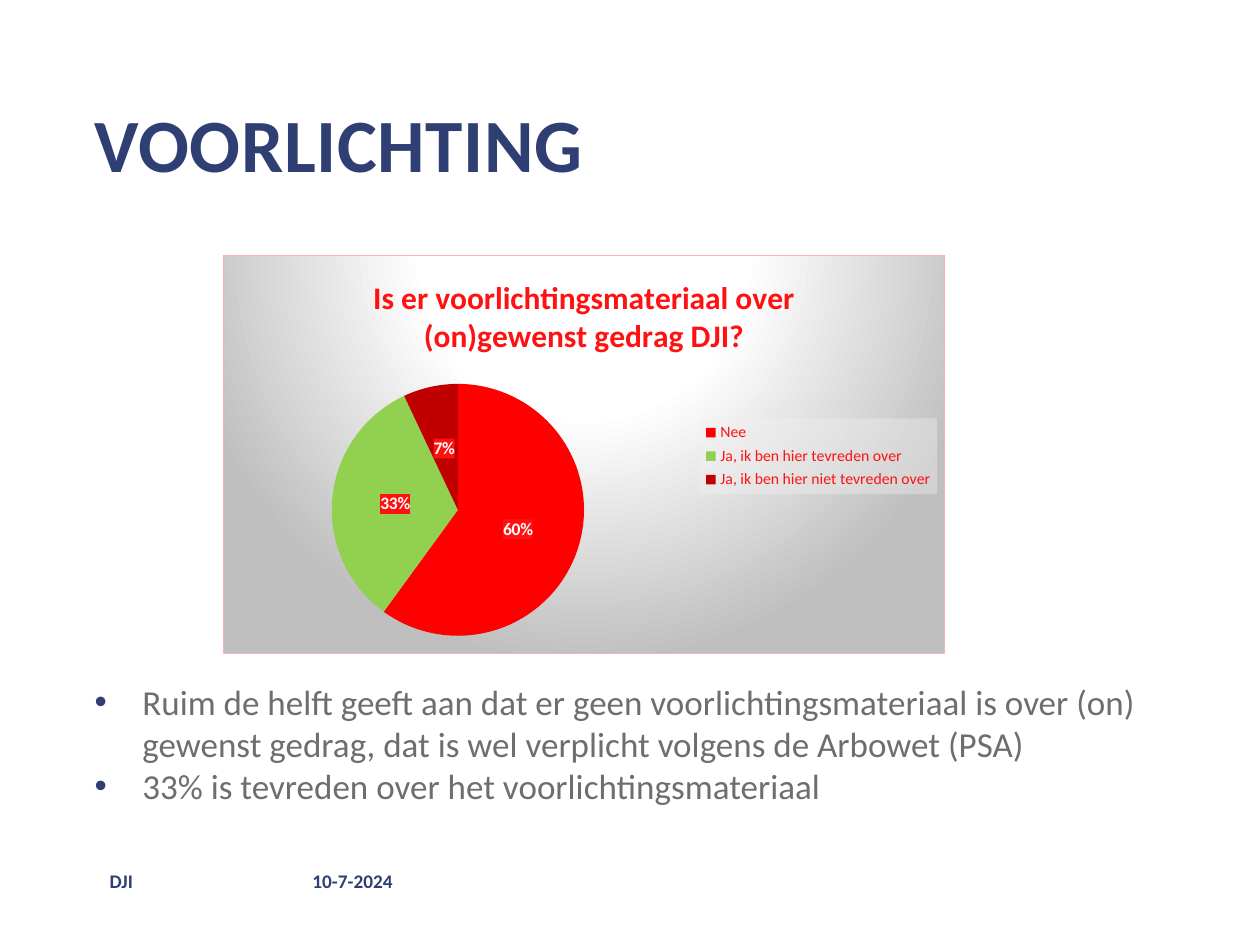
from dataclasses import dataclass

import lxml.etree
import pptx
import pptx.chart.data
import pptx.dml.color
import pptx.enum.chart
import pptx.enum.text
import pptx.oxml
import pptx.oxml.ns
import pptx.util

Inches = pptx.util.Inches
NAVY, GREY, WHITE, RED = "2F3F73", "6E6E6E", "FFFFFF", "FF1111"
NAMESPACES = pptx.oxml.ns.nsdecls("a", "c")


@dataclass
class Box:
    left: float
    top: float
    width: float
    height: float

    def lengths(self) -> list:
        return [Inches(value) for value in (self.left, self.top, self.width, self.height)]


@dataclass
class FooterLabel:
    text: str
    box: Box


@dataclass
class Answer:
    text: str
    percent: int
    color: str


FOOTER = [
    FooterLabel("DJI", Box(0.87, 6.89, 1.5, 0.2)),
    FooterLabel("10-7-2024", Box(2.48, 6.89, 1.3, 0.2)),
]
ANSWERS = [
    Answer("Nee", 60, "FF0000"),
    Answer("Ja, ik ben hier tevreden over", 33, "92D050"),
    Answer("Ja, ik ben hier niet tevreden over", 7, "C00000"),
]
BULLETS = [
    "Ruim de helft geeft aan dat er geen voorlichtingsmateriaal is over (on) "
    "gewenst gedrag, dat is wel verplicht volgens de Arbowet (PSA)",
    "33% is tevreden over het voorlichtingsmateriaal",
]


def rgb(color: str):
    return pptx.dml.color.RGBColor.from_string(color)


def format_font(font, size: float, color: str, bold: bool = False) -> None:
    font.name, font.size, font.bold = "Calibri", pptx.util.Pt(size), bold
    font.color.rgb = rgb(color)


def add_bullet(paragraph, color: str) -> None:
    properties = paragraph._p.get_or_add_pPr()
    properties.set("marL", str(Inches(0.38)))
    properties.set("indent", str(-Inches(0.38)))
    for content in (
        f'<a:buClr {NAMESPACES}><a:srgbClr val="{color}"/></a:buClr>',
        f'<a:buFont {NAMESPACES} typeface="Arial"/>',
        f'<a:buChar {NAMESPACES} char="•"/>',
    ):
        properties.append(pptx.oxml.parse_xml(content))


def write_text(shape, *lines: str, size: float, color: str, bold: bool = False,
               anchor=pptx.enum.text.MSO_ANCHOR.TOP, bullet_color: str = "",
               tracking: float = 0) -> None:
    frame = shape.text_frame
    frame.margin_left = frame.margin_right = frame.margin_top = frame.margin_bottom = 0
    frame.word_wrap, frame.vertical_anchor = True, anchor
    frame.auto_size = pptx.enum.text.MSO_AUTO_SIZE.NONE
    for index, line in enumerate(lines):
        paragraph = frame.add_paragraph() if index else frame.paragraphs[0]
        paragraph.alignment = pptx.enum.text.PP_ALIGN.LEFT
        paragraph.space_before = pptx.util.Pt(0)
        if bullet_color:
            add_bullet(paragraph, bullet_color)
        run = paragraph.add_run()
        run.text = line
        format_font(run.font, size, color, bold)
        if tracking:
            run._r.get_or_add_rPr().set("spc", str(round(tracking * 100)))


def place(shape, box: Box):
    shape.left, shape.top, shape.width, shape.height = box.lengths()
    return shape


def set_layout(element, index: int, box: Box, inner: bool = False) -> None:
    for layout in element.findall(pptx.oxml.ns.qn("c:layout")):
        element.remove(layout)
    target = '<c:layoutTarget val="inner"/>' if inner else ""
    element.insert(index, pptx.oxml.parse_xml(
        f'<c:layout {NAMESPACES}><c:manualLayout>{target}'
        '<c:xMode val="edge"/><c:yMode val="edge"/>'
        f'<c:x val="{box.left}"/><c:y val="{box.top}"/>'
        f'<c:w val="{box.width}"/><c:h val="{box.height}"/>'
        '</c:manualLayout></c:layout>'))


def set_background(element, content: str) -> None:
    text_properties = element.find(pptx.oxml.ns.qn("c:txPr"))
    text_properties.addprevious(
        pptx.oxml.parse_xml(f"<c:spPr {NAMESPACES}>{content}</c:spPr>"))


def translucent(color: str, percent: int) -> str:
    return (f'<a:solidFill><a:srgbClr val="{color}"><a:alpha val="{percent * 1000}"/>'
            '</a:srgbClr></a:solidFill>')


def add_pie(slide, title: str, answers: list[Answer], box: Box) -> None:
    chart_data = pptx.chart.data.CategoryChartData()
    chart_data.categories = [answer.text for answer in answers]
    chart_data.add_series("Series 1", [answer.percent for answer in answers])
    chart = slide.shapes.add_chart(
        pptx.enum.chart.XL_CHART_TYPE.PIE, *box.lengths(), chart_data).chart
    format_font(chart.font, 10, "C00000")
    stops = "".join(f'<a:gs pos="{position * 1000}"><a:srgbClr val="{color}"/></a:gs>'
                    for position, color in ((0, WHITE), (39, WHITE), (100, "BFBFBF")))
    set_background(chart._chartSpace, (
        f'<a:gradFill><a:gsLst>{stops}</a:gsLst><a:path path="circle">'
        '<a:fillToRect l="50000" t="-80000" r="50000" b="180000"/></a:path></a:gradFill>'
        '<a:ln w="9525"><a:solidFill><a:srgbClr val="FFB0B0"/></a:solidFill></a:ln>'))

    chart.has_title = True
    chart.chart_title.include_in_layout = False
    title_run = chart.chart_title.text_frame.paragraphs[0].add_run()
    title_run.text = title
    format_font(title_run.font, 18, RED, True)

    chart.has_legend = True
    legend = chart.legend
    legend.position = pptx.enum.chart.XL_LEGEND_POSITION.RIGHT
    legend.include_in_layout = False
    format_font(legend.font, 9, RED)
    set_layout(legend._element, 1, Box(0.66, 0.41, 0.33, 0.19))
    set_background(legend._element, translucent("F2F2F2", 39))

    plot = chart.plots[0]
    plot.vary_by_categories = True
    set_layout(plot._element.getparent(), 0, Box(0.15, 0.32, 0.35, 0.64), inner=True)
    for index, answer in enumerate(answers):
        fill = plot.series[0].points[index].format.fill
        fill.solid()
        fill.fore_color.rgb = rgb(answer.color)
    labels = plot.series[0].data_labels
    labels.show_percentage, labels.show_value = True, False
    labels.number_format, labels.number_format_is_linked = "0%", False
    labels.position = pptx.enum.chart.XL_LABEL_POSITION.CENTER
    format_font(labels.font, 10, WHITE, True)
    set_background(labels._element, translucent(RED, 75))


def main() -> None:
    """Build the slide about information material and save it."""
    presentation = pptx.Presentation()
    presentation.slide_width, presentation.slide_height = Inches(10), Inches(7.5)
    slide = presentation.slides.add_slide(presentation.slide_layouts[1])
    for label in FOOTER:
        write_text(slide.shapes.add_textbox(*label.box.lengths()), label.text, size=11,
                   color=NAVY, bold=True, anchor=pptx.enum.text.MSO_ANCHOR.MIDDLE)
    write_text(place(slide.shapes.title, Box(0.75, 0.77, 6.3, 0.72)), "VOORLICHTING",
               size=43, color=NAVY, bold=True, tracking=0.4)
    write_text(place(slide.placeholders[1], Box(0.75, 5.4, 9.06, 1.33)), *BULLETS,
               size=20, color=GREY, bullet_color=NAVY)
    add_pie(slide, "Is er voorlichtingsmateriaal over (on)gewenst gedrag DJI?", ANSWERS,
            Box(1.77, 2.02, 5.73, 3.17))
    presentation.save("out.pptx")


if __name__ == "__main__":
    main()
